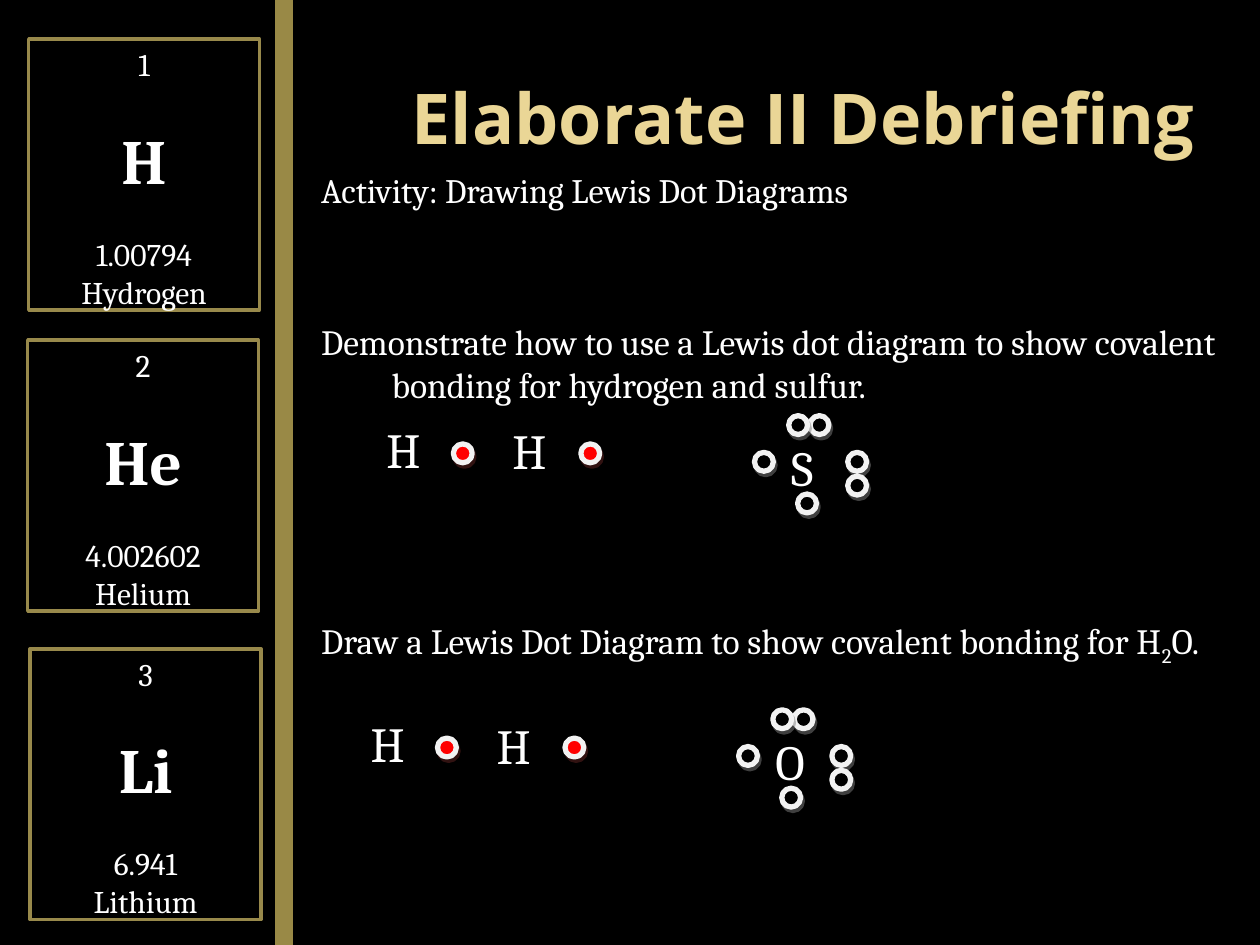
from dataclasses import dataclass

from lxml import etree
from pptx import Presentation
from pptx.dml.color import RGBColor
from pptx.enum import shapes, text
from pptx.oxml.ns import qn
from pptx.util import Cm, Pt


@dataclass(frozen=True)
class Theme:
    ground: str = "000000"
    ink: str = "FFFFFF"
    heading: str = "EAD696"
    card_edge: str = "98894B"
    divider: str = "998946"
    ring: str = "F2F2F2"
    bonding: str = "FF0000"
    bonding_shadow: str = "622423"
    lone_shadow: str = "7F7F7F"
    heading_font: str = "Open Sans"
    font: str = "Cambria"
    heading_size: float = 40
    symbol_size: float = 36
    atom_size: float = 28
    card_size: float = 18


THEME = Theme()

# Content; all positions and sizes are in cm
HEADING = "Elaborate II Debriefing"
# (size, space before, runs); a run is (words, is subscript)
TASKS = [
    (19.6, 0, [("Activity: Drawing Lewis Dot Diagrams", False)]),
    (20.3, 63, [("Demonstrate how to use a Lewis dot diagram to show covalent "
                 "bonding for hydrogen and sulfur.", False)]),
    (20.3, 122, [("Draw a Lewis Dot Diagram to show covalent bonding for H", False),
                 ("2", True), ("O.", False)]),
]
# (left, top, number, symbol, mass, name)
ELEMENTS = [
    (0.58, 0.79, "1", "H", "1.00794", "Hydrogen"),
    (0.56, 6.86, "2", "He", "4.002602", "Helium"),
    (0.61, 13.08, "3", "Li", "6.941", "Lithium"),
]
CARD_W, CARD_H, CARD_GAP = 4.65, 5.46, 21.7
# (central atom, shift right, shift down)
DIAGRAMS = [("S", 0, 0), ("O", -0.32, 5.93)]
HYDROGENS = [(7.54, 8.33), (10.08, 8.36)]
HYDROGEN_ELECTRONS = [(9.14, 8.95), (11.71, 8.95)]
CENTRAL_ATOM = (15.7, 8.69)
GROUPED_ELECTRONS = [(17.09, 9.12), (17.09, 9.6), (16.33, 8.38),
                     (15.21, 9.12), (15.9, 8.38)]
BOTTOM_ELECTRON = (16.08, 9.96)
ELECTRON = 0.38


def rgb(colour):
    return RGBColor.from_string(colour)


def write(paragraph, words, size, bold=False, font=THEME.font, colour=THEME.ink):
    run = paragraph.add_run()
    run.text = words
    run.font.size, run.font.bold, run.font.name = Pt(size), bold, font
    run.font.color.rgb = rgb(colour)
    return run


def place(shape, left, top, width, height):
    shape.left, shape.top = Cm(left), Cm(top)
    shape.width, shape.height = Cm(width), Cm(height)


def outlined(parent, kind, box, fill, edge, weight):
    shape = parent.add_shape(kind, *map(Cm, box))
    shape.shadow.inherit = False
    shape.fill.solid()
    shape.fill.fore_color.rgb = rgb(fill)
    shape.line.color.rgb = rgb(edge)
    shape.line.width = Pt(weight)
    return shape


def electron(parent, left, top, fill, shadow):
    dot = outlined(parent, shapes.MSO_SHAPE.FLOWCHART_CONNECTOR,
                   (left, top, ELECTRON, ELECTRON), fill, THEME.ring, 3)
    effects = dot._element.spPr.find(qn("a:effectLst"))
    outer = etree.SubElement(effects, qn("a:outerShdw"), dist=str(Pt(2.2)),
                             dir=str(63 * 60000), algn="ctr", rotWithShape="0")
    tint = etree.SubElement(outer, qn("a:srgbClr"), val=shadow)
    etree.SubElement(tint, qn("a:alpha"), val="50000")


def atom(parent, symbol, left, top, width):
    frame = parent.add_textbox(*map(Cm, (left, top, width, 1.45))).text_frame
    frame.word_wrap = True
    frame.auto_size = text.MSO_AUTO_SIZE.SHAPE_TO_FIT_TEXT
    write(frame.paragraphs[0], symbol, THEME.atom_size)


def add_heading(slide):
    heading = slide.shapes.title
    place(heading, 6.22, 0.76, 19.99, 3.18)
    frame = heading.text_frame
    frame.margin_left = Cm(2.08)
    frame.vertical_anchor = text.MSO_ANCHOR.MIDDLE
    frame.auto_size = text.MSO_AUTO_SIZE.NONE
    line = frame.paragraphs[0]
    line.alignment = text.PP_ALIGN.LEFT
    write(line, HEADING, THEME.heading_size, True, THEME.heading_font, THEME.heading)


def add_tasks(slide):
    tasks = slide.placeholders[1]
    place(tasks, 5.84, 3.28, 19.56, 14.99)
    frame = tasks.text_frame
    frame.auto_size = text.MSO_AUTO_SIZE.NONE
    for i, (size, before, runs) in enumerate(TASKS):
        task = frame.add_paragraph() if i else frame.paragraphs[0]
        task.space_before = Pt(before)
        # Hanging indent without a bullet
        props = task._p.get_or_add_pPr()
        props.set("marL", str(Cm(1.8)))
        props.set("indent", str(Cm(-1.42)))
        etree.SubElement(props, qn("a:buNone"))
        for words, subscript in runs:
            run = write(task, words, size)
            if subscript:
                run._r.get_or_add_rPr().set("baseline", "-25000")


def add_card(slide, left, top, number, symbol, mass, name):
    card = outlined(slide.shapes, shapes.MSO_SHAPE.RECTANGLE,
                    (left, top, CARD_W, CARD_H), THEME.ground, THEME.card_edge, 2)
    frame = card.text_frame
    frame.vertical_anchor = text.MSO_ANCHOR.TOP
    lines = [(number, 0), (symbol, CARD_GAP), (mass, CARD_GAP), (name, 0)]
    for i, (words, before) in enumerate(lines):
        line = frame.add_paragraph() if i else frame.paragraphs[0]
        line.alignment = text.PP_ALIGN.CENTER
        line.space_before = Pt(before)
        is_symbol = words == symbol
        write(line, words, THEME.symbol_size if is_symbol else THEME.card_size, is_symbol)


def add_divider(slide):
    divider = slide.shapes.add_connector(shapes.MSO_CONNECTOR.STRAIGHT,
                                         Cm(5.72), Cm(0), Cm(5.72), Cm(19.05))
    divider.line.color.rgb = rgb(THEME.divider)
    divider.line.width = Pt(10)
    etree.SubElement(divider._element.spPr, qn("a:effectLst"))


def add_diagram(slide, central, dx, dy):
    lone = (THEME.ground, THEME.lone_shadow)
    group = slide.shapes.add_group_shape()
    for x, y in GROUPED_ELECTRONS:
        electron(group.shapes, x + dx, y + dy, *lone)
    for x, y in HYDROGEN_ELECTRONS:
        electron(slide.shapes, x + dx, y + dy, THEME.bonding, THEME.bonding_shadow)
    x, y = CENTRAL_ATOM
    atom(slide.shapes, central, x + dx, y + dy, 1.6)
    for x, y in HYDROGENS:
        atom(slide.shapes, "H", x + dx, y + dy, 1.37)
    x, y = BOTTOM_ELECTRON
    electron(slide.shapes, x + dx, y + dy, *lone)


def main():
    deck = Presentation()
    deck.slide_width, deck.slide_height = Cm(25.4), Cm(19.05)
    slide = deck.slides.add_slide(deck.slide_layouts[1])
    slide.background.fill.solid()
    slide.background.fill.fore_color.rgb = rgb(THEME.ground)

    add_heading(slide)
    add_tasks(slide)
    for element in ELEMENTS:
        add_card(slide, *element)
    add_divider(slide)
    for diagram in DIAGRAMS:
        add_diagram(slide, *diagram)
    deck.save("out.pptx")


if __name__ == "__main__":
    main()
